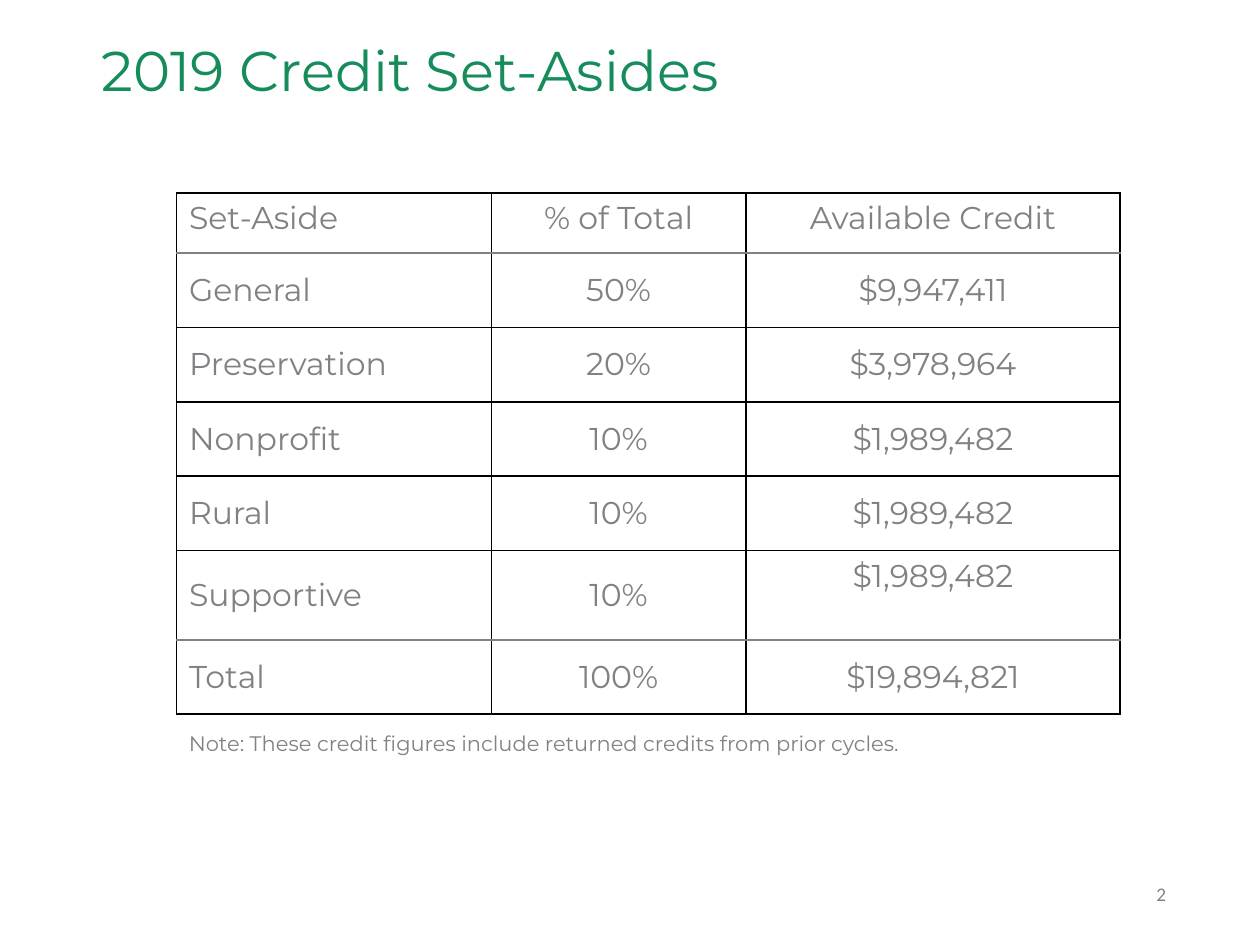
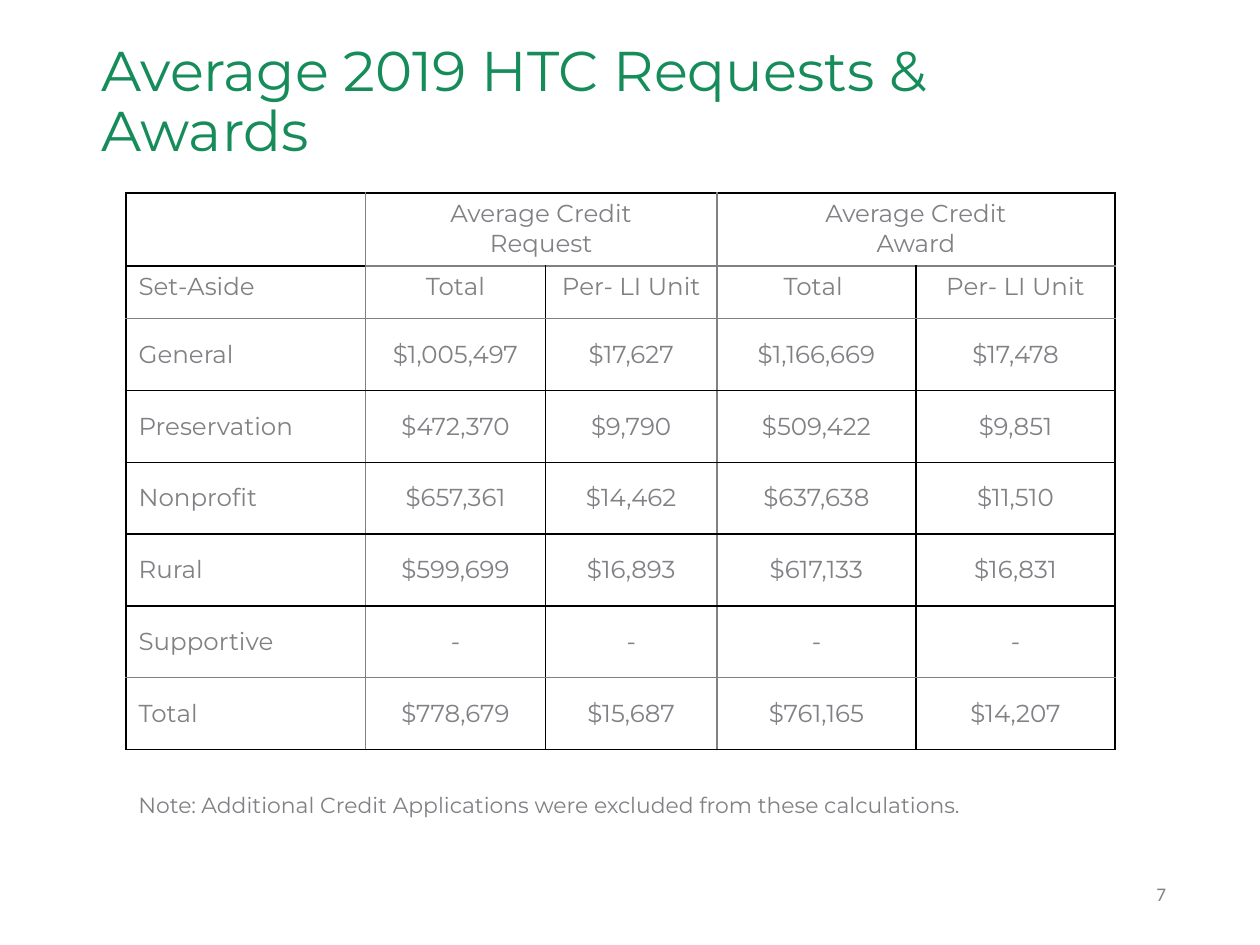
import pptx
import pptx.util
import pptx.dml.color
import pptx.enum.text
import pptx.oxml
from pptx.oxml.ns import qn
from lxml import etree

Inches = pptx.util.Inches
Pt = pptx.util.Pt
ALIGN = pptx.enum.text.PP_ALIGN
ANCHOR = pptx.enum.text.MSO_ANCHOR

COLOURS = {"title": "158C59", "grey": "808184"}
FONT = "Montserrat"
NUMBER_FONT = "Calibri"

SET_ASIDES = [
    ["Set-Aside", "% of Total", "Available Credit"],
    ["General", "50%", "$9,947,411"],
    ["Preservation", "20%", "$3,978,964"],
    ["Nonprofit", "10%", "$1,989,482"],
    ["Rural", "10%", "$1,989,482"],
    ["Supportive", "10%", "$1,989,482"],
    ["Total", "100%", "$19,894,821"],
]
AVERAGES = [
    ["", "Average Credit\nRequest", "", "Average Credit\nAward", ""],
    ["Set-Aside", "Total", "Per- LI Unit", "Total ", "Per- LI Unit"],
    ["General", "$1,005,497", "$17,627", "$1,166,669", "$17,478"],
    ["Preservation", "$472,370", "$9,790", "$509,422", "$9,851"],
    ["Nonprofit", "$657,361", "$14,462", "$637,638", "$11,510"],
    ["Rural", "$599,699", "$16,893", "$617,133", "$16,831"],
    ["Supportive", "-", "-", "-", "-"],
    ["Total", "$778,679", "$15,687", "$761,165", "$14,207"],
]


def style_font(paragraph, size, colour="grey", name=FONT):
    paragraph.font.size = Pt(size)
    paragraph.font.name = name
    paragraph.font.color.rgb = pptx.dml.color.RGBColor.from_string(COLOURS[colour])


def add_text(slide, box, text, size, colour="grey", name=FONT, wrap=True):
    frame = slide.shapes.add_textbox(*map(Inches, box)).text_frame
    frame.word_wrap = wrap
    paragraph = frame.paragraphs[0]
    paragraph.text = text
    style_font(paragraph, size, colour, name)
    return paragraph


def add_titled_slide(deck, title, number):
    slide = deck.slides.add_slide(deck.slide_layouts[6])
    add_text(slide, (9.08, 6.95, 0.38, 0.29), str(number), 11,
             name=NUMBER_FONT, wrap=False)
    heading = add_text(slide, (0.71, 0.29, 8.39, 1.11), title, 32, "title")
    heading.line_spacing = 0.9
    return slide


def add_border(cell, side):
    """Draw a 1 pt rule on one side of a cell: L, R, T or B."""
    line = etree.SubElement(cell._tc.get_or_add_tcPr(), qn(f"a:ln{side}"), w=str(int(Pt(1))))
    fill = etree.SubElement(line, qn("a:solidFill"))
    etree.SubElement(fill, qn("a:srgbClr"), val=COLOURS["grey"])


def fill_cell(cell, text, size, is_label, is_header):
    cell.text = text
    cell.vertical_anchor = ANCHOR.TOP if is_header else ANCHOR.MIDDLE
    for paragraph in cell.text_frame.paragraphs:
        paragraph.alignment = ALIGN.LEFT if is_label else ALIGN.CENTER
        style_font(paragraph, size)


def add_ruled_table(slide, corner, widths, heights, rows, size,
                    rules_below, rules_right=(), header_rows=1):
    """rules_below maps a row to the first column its rule reaches;
    rules_right lists the columns with a rule on their right."""
    left, top = corner
    table = slide.shapes.add_table(
        len(rows), len(widths), Inches(left), Inches(top),
        Inches(sum(widths)), Inches(sum(heights))).table
    table.first_row = table.horz_banding = False
    properties = table._tbl.tblPr
    properties.remove(properties.find(qn("a:tableStyleId")))
    for column, width in zip(table.columns, widths):
        column.width = Inches(width)
    for row, height in zip(table.rows, heights):
        row.height = Inches(height)

    last = len(widths)
    for r, texts in enumerate(rows):
        for c, text in enumerate(texts):
            cell = table.cell(r, c)
            fill_cell(cell, text, size, c == 0, r < header_rows)
            sides = {
                "L": c - 1 in rules_right,
                "R": c in rules_right,
                "T": c >= rules_below.get(r - 1, last),
                "B": c >= rules_below.get(r, last),
            }
            for side, ruled in sides.items():
                if ruled:
                    add_border(cell, side)
            cell.fill.background()
    return table


def add_set_asides_slide(deck):
    slide = add_titled_slide(deck, "2019 Credit Set-Asides", 2)
    heights = [0.48] + [0.59] * 4 + [0.71, 0.59]
    table = add_ruled_table(slide, (1.4, 1.53), [2.5, 2.02, 2.97], heights,
                            SET_ASIDES, 18, rules_below={0: 0, 5: 0})
    supportive_credit = table.cell(5, 2)
    supportive_credit.margin_bottom = Inches(0.35)
    add_text(slide, (1.4, 5.75, 7.49, 0.3),
             "Note: These credit figures include returned credits from prior cycles.", 12)


def add_averages_slide(deck):
    slide = add_titled_slide(deck, "Average 2019 HTC Requests & Awards", 7)
    heights = [0.58, 0.42] + [0.57] * 6
    table = add_ruled_table(slide, (1, 1.53), [1.9, 1.43, 1.36, 1.58, 1.58], heights,
                            AVERAGES, 14, rules_below={0: 1, 1: 0, 6: 0},
                            rules_right=(0, 2), header_rows=2)
    for first in (1, 3):
        table.cell(0, first).merge(table.cell(0, first + 1))
    add_text(slide, (1, 6.23, 8.32, 0.31),
             "Note:\tAdditional Credit Applications were excluded from these calculations.",
             12.5)


def main():
    deck = pptx.Presentation()
    deck.slide_width, deck.slide_height = Inches(10), Inches(7.5)
    add_set_asides_slide(deck)
    add_averages_slide(deck)
    deck.save("out.pptx")


if __name__ == "__main__":
    main()
